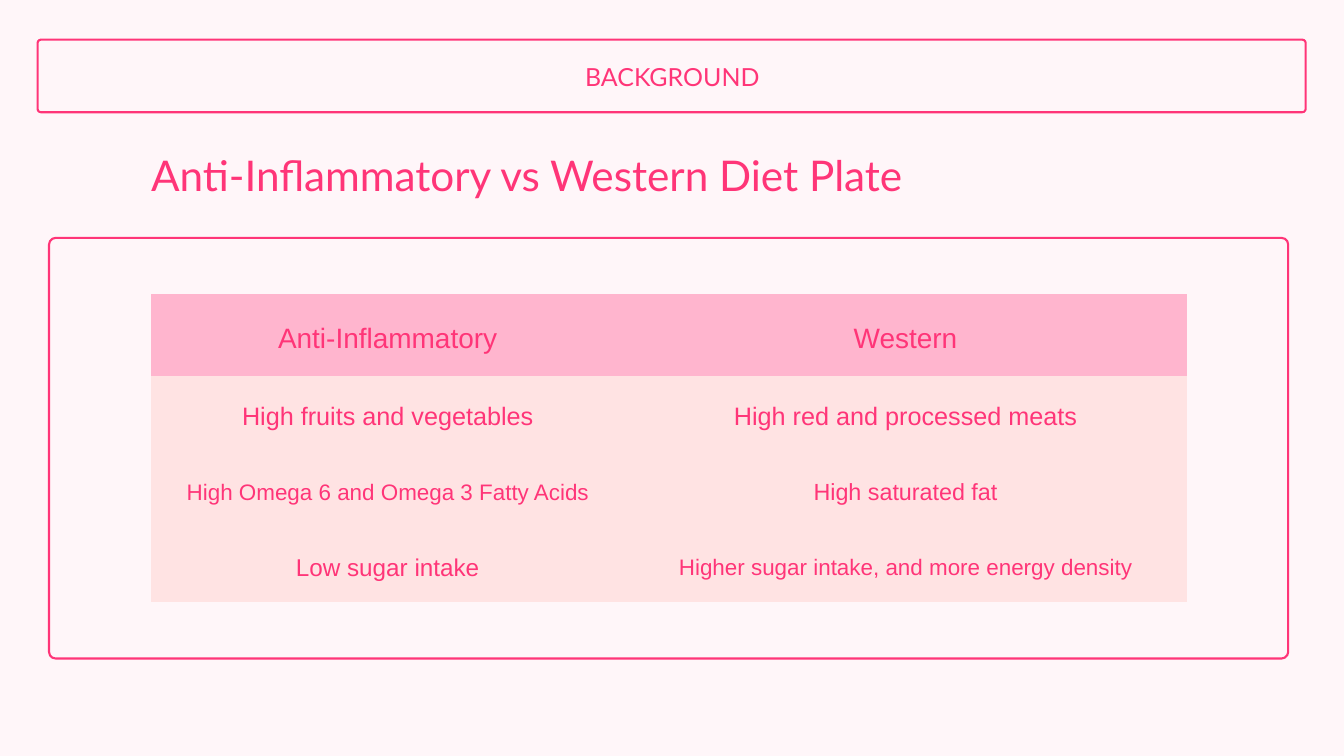
"""Build a slide comparing anti-inflammatory and Western diets in a table."""
import pptx
import pptx.util
import pptx.dml.color
import pptx.enum.shapes
import pptx.enum.text

Inches, Pt = pptx.util.Inches, pptx.util.Pt
ALIGN = pptx.enum.text.PP_ALIGN

COLORS = {"page": "FFF6F9", "pink": "FF3578", "header": "FFB5CE", "body": "FFE3E3"}
NO_GRID_STYLE = "{2D5ABB26-0587-4C30-8999-92F81FD0307C}"
LEADING = 1.4
CELL_MARGIN = 0.21

FRAMES = [
    {"box": (0.56, 0.59, 18.87, 1.08), "radius": 0.05},
    {"box": (0.73, 3.54, 18.44, 6.26), "radius": 0.1},
]
LABELS = [
    {"text": "BACKGROUND", "box": (8.01, 0.84, 3.99, 0.52),
     "size": 26.7, "align": ALIGN.CENTER},
    {"text": "Anti-Inflammatory vs Western Diet Plate", "box": (2.25, 2.09, 16.1, 0.89),
     "size": 45.3, "align": ALIGN.LEFT},
]
TABLE_BOX = (2.25, 4.37, 15.42, 4.59)
COLUMN_WIDTHS = [7.04, 8.37]
ROW_HEIGHTS = [1.22, 1.13, 1.12, 1.12]
DIETS = [
    [("Anti-Inflammatory", 30), ("Western", 30)],
    [("High fruits and vegetables", 27), ("High red and processed meats", 27)],
    [("High Omega 6 and Omega 3 Fatty Acids", 24), ("High saturated fat", 25)],
    [("Low sugar intake", 26), ("Higher sugar intake, and more energy density", 24)],
]


def rgb(name):
    return pptx.dml.color.RGBColor.from_string(COLORS[name])


def fill_with(fill, name):
    fill.solid()
    fill.fore_color.rgb = rgb(name)


def write(tf, text, size, font="Lato", align=ALIGN.CENTER, color="pink"):
    tf.word_wrap = True
    p = tf.paragraphs[0]
    p.alignment = align
    p.line_spacing = Pt(round(size * LEADING, 1))
    r = p.add_run()
    r.text = text
    r.font.name = font
    r.font.size = Pt(size)
    r.font.color.rgb = rgb(color)


def add_frame(slide, box, radius):
    sp = slide.shapes.add_shape(
        pptx.enum.shapes.MSO_SHAPE.ROUNDED_RECTANGLE, *map(Inches, box))
    sp.adjustments[0] = radius / min(box[2:])
    sp.shadow.inherit = False
    sp.fill.background()
    sp.line.color.rgb = rgb("pink")
    sp.line.width = Pt(2.25)


def add_label(slide, text, box, size, align):
    tf = slide.shapes.add_textbox(*map(Inches, box)).text_frame
    tf.margin_left = tf.margin_top = tf.margin_right = tf.margin_bottom = 0
    write(tf, text, size, align=align)


def add_diet_table(slide):
    frame = slide.shapes.add_table(
        len(DIETS), len(COLUMN_WIDTHS), *map(Inches, TABLE_BOX))
    table = frame.table
    table.horz_banding = table.first_row = False
    table._tbl.tblPr.find(pptx.oxml.ns.qn("a:tableStyleId")).text = NO_GRID_STYLE
    for column, width in zip(table.columns, COLUMN_WIDTHS):
        column.width = Inches(width)
    for i, (row, height) in enumerate(zip(table.rows, ROW_HEIGHTS)):
        row.height = Inches(height)
        for cell, (text, size) in zip(row.cells, DIETS[i]):
            fill_with(cell.fill, "body" if i else "header")
            cell.vertical_anchor = pptx.enum.text.MSO_ANCHOR.MIDDLE
            cell.margin_left = cell.margin_right = Inches(CELL_MARGIN)
            cell.margin_top = cell.margin_bottom = Inches(CELL_MARGIN)
            write(cell.text_frame, text, size, font="Arial")


def main():
    prs = pptx.Presentation()
    prs.slide_width, prs.slide_height = Inches(20), Inches(11.25)
    slide = prs.slides.add_slide(prs.slide_layouts[6])
    fill_with(slide.background.fill, "page")
    for frame in FRAMES:
        add_frame(slide, **frame)
    add_diet_table(slide)
    for label in LABELS:
        add_label(slide, **label)
    prs.save("out.pptx")


if __name__ == "__main__":
    main()
